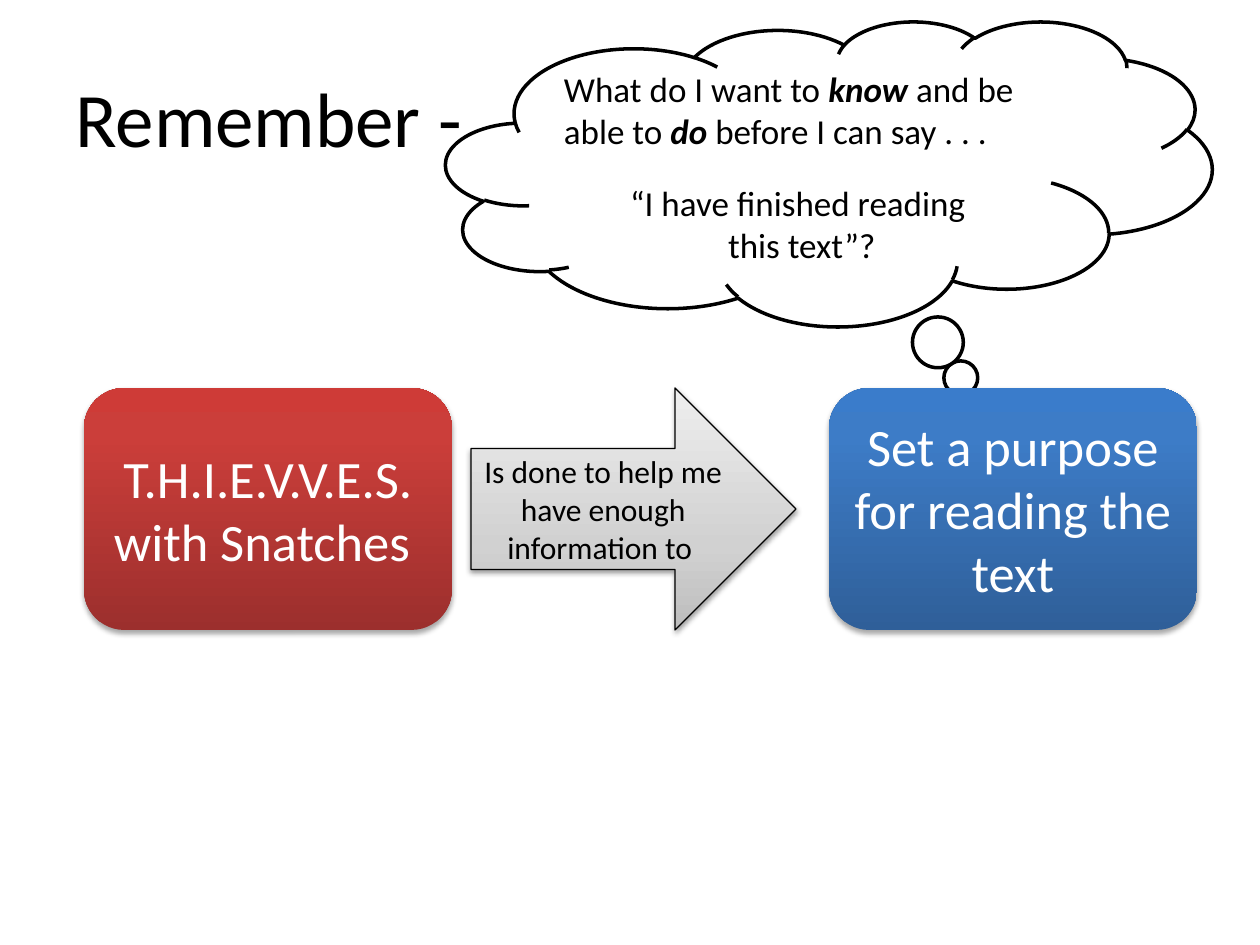
from lxml import etree
from pptx import Presentation
from pptx.dml.color import RGBColor
from pptx.enum.shapes import MSO_SHAPE
from pptx.enum.text import MSO_ANCHOR, PP_ALIGN
from pptx.oxml.ns import qn
from pptx.util import Emu, Pt

CLOUD, ROUND, ARROW = (MSO_SHAPE.CLOUD_CALLOUT, MSO_SHAPE.ROUNDED_RECTANGLE,
                       MSO_SHAPE.RIGHT_ARROW)
MIDDLE = MSO_ANCHOR.MIDDLE
LEFT, CENTER = PP_ALIGN.LEFT, PP_ALIGN.CENTER

BLACK, WHITE = "000000", "FFFFFF"
RED = [(0, "9C2F2D"), (80, "CB3E3A"), (100, "CE3B37")]
BLUE = [(0, "2F5F99"), (80, "3D7CC7"), (100, "3A7CCB")]
GRAY = [(0, "BDBDBD"), (35, "D1D1D1"), (100, "EEEEEE")]
ROW_TOP, ROW_HIGH, BOX_WIDE = 388, 242, 368


def px(*lengths):
    return [Emu(round(n * 914400 / 126)) for n in lengths]


def rgb(value):
    return RGBColor.from_string(value)


def style(para, size, color, align):
    para.alignment = align
    for run in para.runs:
        run.font.name = "Calibri"
        run.font.size = Pt(size)
        run.font.color.rgb = rgb(color)


def write(shape, text, size, color, align=CENTER):
    frame = shape.text_frame
    frame.word_wrap = True
    frame.vertical_anchor = MIDDLE
    frame.text = text
    for para in frame.paragraphs:
        style(para, size, color, align)


def add_shape(slide, kind, box, line=None):
    """Add a shape without shadow; line is its black outline in points."""
    shape = slide.shapes.add_shape(kind, *px(*box))
    shape.shadow.inherit = False
    if line:
        shape.line.color.rgb = rgb(BLACK)
        shape.line.width = Pt(line)
    else:
        shape.line.fill.background()
    return shape


def add_color(parent, tag, color, **attrs):
    """Append an element that holds one colour and return the colour."""
    node = etree.SubElement(parent, qn(tag), **attrs)
    return etree.SubElement(node, qn("a:srgbClr"), val=color)


def shade(shape, stops):
    """Fill with a gradient that runs from bottom to top."""
    shape.fill.gradient()
    shape.fill.gradient_angle = 90
    holder = shape._element.spPr.find(".//" + qn("a:gsLst"))
    for old in list(holder):
        holder.remove(old)
    for pos, color in stops:
        add_color(holder, "a:gs", color, pos=str(pos * 1000))


def drop_shadow(shape, alpha, dist):
    effects = shape._element.spPr.find(qn("a:effectLst"))
    color = add_color(effects, "a:outerShdw", BLACK, blurRad=str(Pt(3.1)),
                      dist=str(Pt(dist)), dir="5400000", rotWithShape="0")
    etree.SubElement(color, qn("a:alpha"), val=str(alpha * 1000))


def add_title(slide):
    title = slide.shapes.add_textbox(*px(63, 38, 1134, 158))
    write(title, "Remember -", 44, BLACK, LEFT)


def add_cloud(slide):
    cloud = add_shape(slide, CLOUD, (446, 21, 766, 305), 2)
    cloud.adjustments[0], cloud.adjustments[1] = 0.19, 0.74
    cloud.fill.solid()
    cloud.fill.fore_color.rgb = rgb(WHITE)
    write(cloud, "\n“I have finished reading \nthis text”?", 20, BLACK)
    ask, quote = cloud.text_frame.paragraphs[:2]
    parts = ["What do I want to ", "know", " and be able to ", "do ",
             "before I can say . . ."]
    for part in parts:
        run = ask.add_run()
        run.text = part
        run.font.bold = run.font.italic = part in ("know", "do ")
    style(ask, 20, BLACK, LEFT)
    quote.space_before = Pt(17)


def add_step(slide, left, text, stops):
    box = add_shape(slide, ROUND, (left, ROW_TOP, BOX_WIDE, ROW_HIGH))
    shade(box, stops)
    drop_shadow(box, 35, 1.8)
    write(box, text, 30, WHITE)


def add_arrow(slide):
    arrow = add_shape(slide, ARROW, (471, ROW_TOP, 325, ROW_HIGH), 0.75)
    shade(arrow, GRAY)
    drop_shadow(arrow, 38, 1.6)
    write(arrow, "Is done to help me have enough information to ", 18, BLACK)


def main():
    deck = Presentation()
    deck.slide_width, deck.slide_height = px(1260, 945)
    slide = deck.slides.add_slide(deck.slide_layouts[6])
    add_cloud(slide)
    add_title(slide)
    add_step(slide, 829, "Set a purpose for reading the text", BLUE)
    add_step(slide, 84, "T.H.I.E.V.V.E.S. with Snatches ", RED)
    add_arrow(slide)
    deck.save("out.pptx")


if __name__ == "__main__":
    main()
